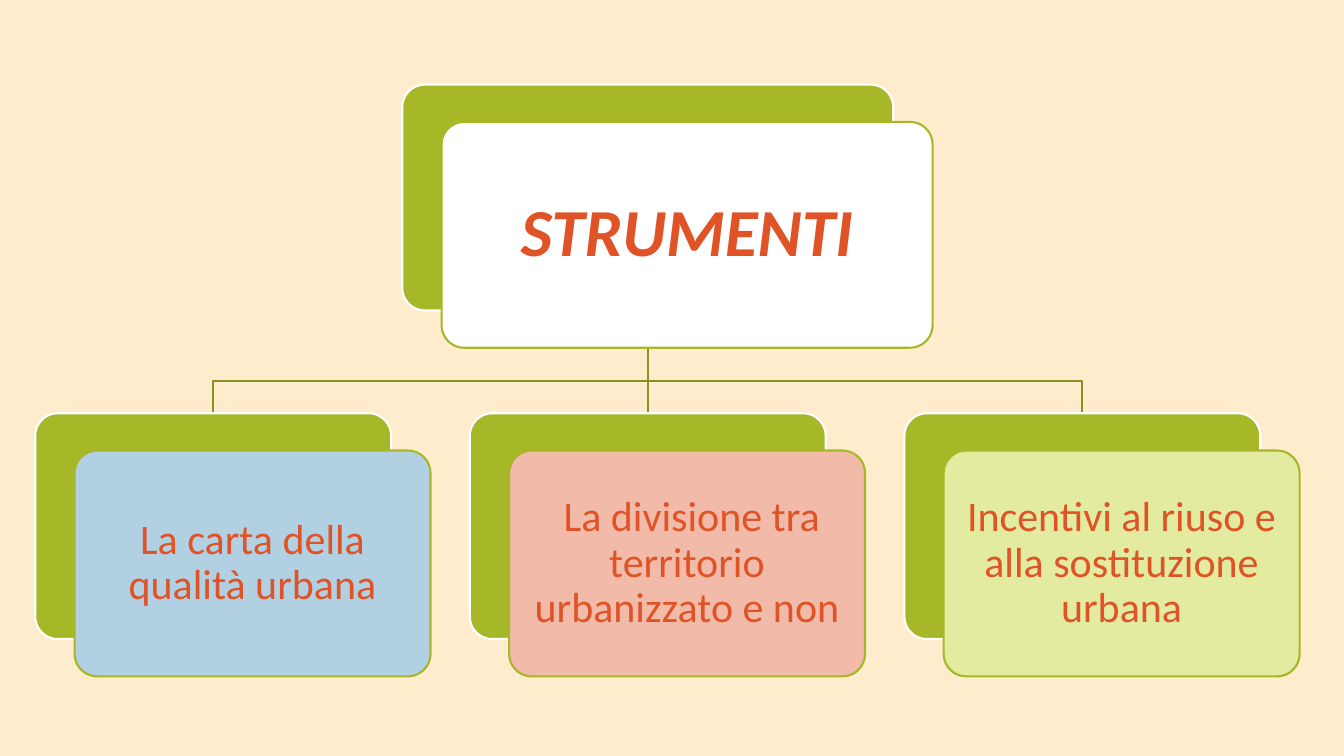
import pptx
import pptx.util
import pptx.dml.color
import pptx.enum.shapes
import pptx.enum.text
import pptx.oxml

Inches, Pt = pptx.util.Inches, pptx.util.Pt
SHAPES = pptx.enum.shapes.MSO_SHAPE
GREEN, DARK_GREEN, ORANGE, WHITE = "A6B727", "85931F", "DF5327", "FFFFFF"
CARD_H, SHIFT_X, SHIFT_Y = 2.24, 0.39, 0.37
ROOT_X, ROOT_Y, ROOT_W = 3.99, 0.84, 4.87
CHILD_X, CHILD_Y, CHILD_W, CHILD_STEP = 0.35, 4.1, 3.53, 4.31
FORK_Y = 3.78


def rgb(value):
    return pptx.dml.color.RGBColor.from_string(value)


def add_card(x, y, w, fill, text, inset, font):
    """Draw a green card with a text card offset in front; return the green one."""
    cards = []
    for shift, colour, line in ((0, GREEN, WHITE), (1, fill, GREEN)):
        s = slide.shapes.add_shape(
            SHAPES.ROUNDED_RECTANGLE, Inches(x + shift * SHIFT_X),
            Inches(y + shift * SHIFT_Y), Inches(w), Inches(CARD_H))
        s.adjustments[0] = 0.1
        s.shadow.inherit = False
        s.fill.solid()
        s.fill.fore_color.rgb = rgb(colour)
        s.line.color.rgb = rgb(line)
        s.line.width = Pt(1.5)
        cards.append(s)
    tf = cards[1].text_frame
    tf.word_wrap = True
    tf.vertical_anchor = pptx.enum.text.MSO_ANCHOR.MIDDLE
    for side in ("left", "top", "right", "bottom"):
        setattr(tf, f"margin_{side}", Inches(inset))
    p = tf.paragraphs[0]
    p.alignment = pptx.enum.text.PP_ALIGN.CENTER
    p.line_spacing = 0.9
    r = p.add_run()
    r.text = text
    r.font.color.rgb = rgb(ORANGE)
    for name, value in {"name": "Calibri", **font}.items():
        setattr(r.font, name, value)
    return cards[0]


# Slide and background
prs = pptx.Presentation()
prs.slide_width, prs.slide_height = Inches(13.33), Inches(7.5)
slide = prs.slides.add_slide(prs.slide_layouts[6])
slide.background.fill.solid()
slide.background.fill.fore_color.rgb = rgb("FFECCC")

# Branches, placed behind the cards
root_mid, root_bottom = ROOT_X + ROOT_W / 2, ROOT_Y + CARD_H
branches = []
for column in (2, 0):
    child_mid = CHILD_X + column * CHILD_STEP + CHILD_W / 2
    builder = slide.shapes.build_freeform(Inches(root_mid), Inches(root_bottom))
    builder.add_line_segments(
        [(Inches(root_mid), Inches(FORK_Y)), (Inches(child_mid), Inches(FORK_Y)),
         (Inches(child_mid), Inches(CHILD_Y))], close=False)
    s = builder.convert_to_shape()
    s.shadow.inherit = False
    s.fill.background()
    branches.append(s)
stem = slide.shapes.add_connector(
    pptx.enum.shapes.MSO_CONNECTOR.STRAIGHT, Inches(root_mid), Inches(root_bottom),
    Inches(root_mid), Inches(CHILD_Y))
stem._element.spPr.append(pptx.oxml.parse_xml(
    '<a:effectLst xmlns:a="http://schemas.openxmlformats.org/drawingml/2006/main"/>'))
for s in branches + [stem]:
    s.line.color.rgb = rgb(DARK_GREEN)
    s.line.width = Pt(1.5)

# Root card
root = add_card(ROOT_X, ROOT_Y, ROOT_W, WHITE, "STRUMENTI", 0.2,
                {"size": Pt(48), "bold": True, "italic": True})

# Child cards
children = []
for column, (fill, text) in enumerate((
        ("B1D1E3", "La carta della qualità urbana"),
        ("F2BAA9", " La divisione tra territorio urbanizzato e non"),
        ("E2EBA0", "Incentivi al riuso e alla sostituzione urbana"))):
    children.append(add_card(CHILD_X + column * CHILD_STEP, CHILD_Y, CHILD_W,
                             fill, text, 0.12, {"size": Pt(30)}))

# Join the straight stem to the root and the middle child
stem.begin_connect(root, 2)
stem.end_connect(children[1], 0)

prs.save("out.pptx")
